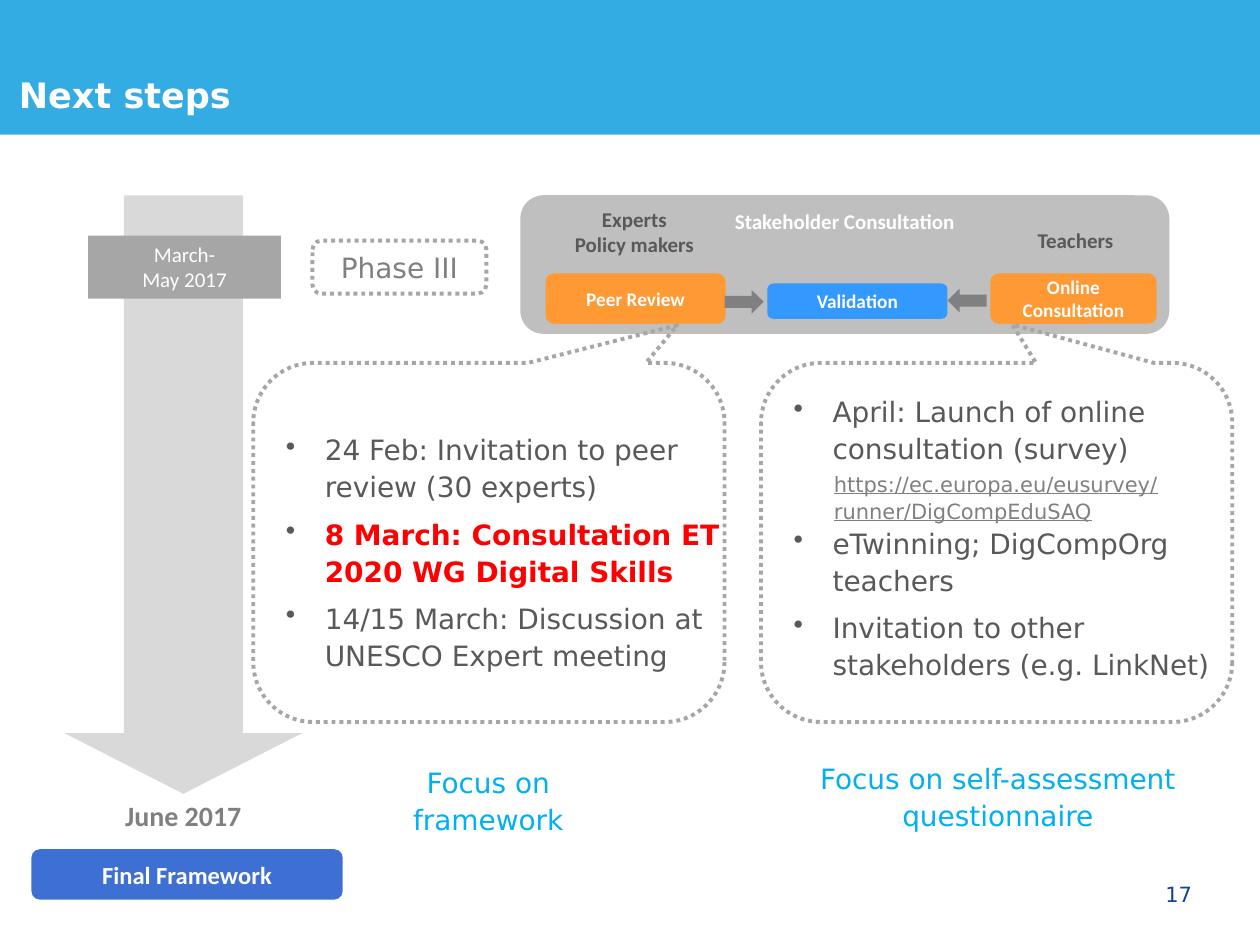
from dataclasses import dataclass

from lxml import etree
from pptx import Presentation
from pptx.dml.color import RGBColor
from pptx.enum.dml import MSO_LINE
from pptx.enum.shapes import MSO_SHAPE
from pptx.enum.text import MSO_ANCHOR, PP_ALIGN
from pptx.oxml.ns import qn
from pptx.util import Inches, Pt

LEFT, CENTER, RIGHT = PP_ALIGN.LEFT, PP_ALIGN.CENTER, PP_ALIGN.RIGHT
TOP, MIDDLE, BOTTOM = MSO_ANCHOR.TOP, MSO_ANCHOR.MIDDLE, MSO_ANCHOR.BOTTOM
RECT, ROUNDED = MSO_SHAPE.RECTANGLE, MSO_SHAPE.ROUNDED_RECTANGLE
DOWN_ARROW, RIGHT_ARROW = MSO_SHAPE.DOWN_ARROW, MSO_SHAPE.RIGHT_ARROW
CALLOUT = MSO_SHAPE.ROUNDED_RECTANGULAR_CALLOUT
DOTTED = MSO_LINE.ROUND_DOT


@dataclass(frozen=True)
class Theme:
    body: str = "DejaVu Sans"
    label: str = "Calibri"
    white: str = "FFFFFF"
    band: str = "33ACE3"
    arrow: str = "D9D9D9"
    panel: str = "BFBFBF"
    outline: str = "A6A6A6"
    muted: str = "808080"
    dark: str = "595959"
    orange: str = "FF9933"
    blue: str = "3399FF"
    result: str = "3E6FD2"
    focus: str = "00B0F0"
    alert: str = "FF0000"
    number: str = "164194"
    title_size: int = 20
    text_size: int = 16
    result_size: int = 14
    small_size: int = 12
    step_size: int = 11


THEME = Theme()
COLUMNS, ROWS = 100, 75
WIDTH, HEIGHT = Inches(10), Inches(7.5)

TITLE = "Next steps"
PAGE = "17"
PERIOD = ["March-", "May 2017"]
DEADLINE = "June 2017"
RESULT = "Final Framework"
PHASE = "Phase III"
PANEL_TITLE = "Stakeholder Consultation"
STEPS = [
    ("Peer Review", THEME.orange, (43.3, 21.7, 14.3, 4)),
    ("Validation", THEME.blue, (60.9, 22.5, 14.3, 2.8)),
    ("Online Consultation", THEME.orange, (78.6, 21.7, 13.2, 4)),
]
STEP_ARROWS = [((57.5, 23), 0), ((75.2, 22.9), 180)]
AUDIENCES = [
    (["Experts", "Policy makers"], (44.6, 15.9, 11.5, 5), 1),
    (["Teachers"], (81.3, 17.4, 8.1, 3.1), 1.1),
]
SURVEY_URL = "https://ec.europa.eu/eusurvey/runner/DigCompEduSAQ"
URL_GAP = 27
TRACKS = [
    {
        "column": 20.1,
        "pointer": (-0.4, 0.605),
        "list_row": 33.6,
        "list_rows": 20.5,
        "items": [
            "24 Feb: Invitation to peer review (30 experts)",
            ("8 March: Consultation ET 2020 WG Digital Skills",
             {"color": THEME.alert, "bold": True}),
            "14/15 March: Discussion at UNESCO Expert meeting",
        ],
        "focus": "Focus on framework",
        "focus_place": (30.3, 60, 16.9, 6.9),
    },
    {
        "column": 60.4,
        "pointer": (-0.033, 0.607),
        "list_row": 30.6,
        "list_rows": 24.3,
        "items": [
            "April: Launch of online consultation (survey)",
            ("eTwinning; DigCompOrg teachers", {"before": URL_GAP}),
            "Invitation to other stakeholders (e.g. LinkNet)",
        ],
        "focus": "Focus on self-assessment questionnaire",
        "focus_place": (62.6, 59.7, 33.2, 6.9),
    },
]


def place(column, row, columns, rows):
    return (round(WIDTH * column / COLUMNS), round(HEIGHT * row / ROWS),
            round(WIDTH * columns / COLUMNS), round(HEIGHT * rows / ROWS))


def add_bullet(paragraph, color):
    properties = paragraph._p.get_or_add_pPr()
    properties.set("marL", str(Inches(0.31)))
    properties.set("indent", str(-Inches(0.31)))
    bullet_color = etree.SubElement(properties, qn("a:buClr"))
    etree.SubElement(bullet_color, qn("a:srgbClr"), val=color)
    etree.SubElement(properties, qn("a:buChar"), char="•")


def write(holder, text, *, size=THEME.text_size, font=THEME.body, color=THEME.dark,
          bold=False, underline=False, align=LEFT, anchor=TOP, spacing=1,
          before=0, after=0, bullet=False, wrap=True, insets=(0.1, 0.05)):
    frame = holder.text_frame
    frame.word_wrap = wrap
    frame.vertical_anchor = anchor
    frame.margin_left = frame.margin_right = Inches(insets[0])
    frame.margin_top = frame.margin_bottom = Inches(insets[1])
    for index, entry in enumerate([text] if isinstance(text, str) else text):
        words, own = entry if isinstance(entry, tuple) else (entry, {})
        paragraph = frame.add_paragraph() if index else frame.paragraphs[0]
        if bullet:
            add_bullet(paragraph, color)
        paragraph.alignment = align
        paragraph.line_spacing = spacing
        paragraph.space_before = Pt(own.get("before", before))
        paragraph.space_after = Pt(after)
        run = paragraph.add_run()
        run.text = words
        run.font.name = font
        run.font.size = Pt(size)
        run.font.bold = own.get("bold", bold)
        run.font.underline = underline
        run.font.color.rgb = RGBColor.from_string(own.get("color", color))


def draw(slide, kind, area, fill=None, dotted=False, rotation=0, adjustments=()):
    figure = slide.shapes.add_shape(kind, *place(*area))
    figure.shadow.inherit = False
    figure.rotation = rotation
    for index, value in enumerate(adjustments):
        figure.adjustments[index] = value
    if fill:
        figure.fill.solid()
        figure.fill.fore_color.rgb = RGBColor.from_string(fill)
    else:
        figure.fill.background()
    if dotted:
        figure.line.color.rgb = RGBColor.from_string(THEME.outline)
        figure.line.width = Pt(2.25)
        figure.line.dash_style = DOTTED
    else:
        figure.line.fill.background()
    return figure


def note(slide, area, text, **style):
    write(slide.shapes.add_textbox(*place(*area)), text, **style)


def add_header(slide):
    band = draw(slide, RECT, (0, 0, COLUMNS, 10.7), THEME.band)
    heading = slide.shapes.title
    band._element.addnext(heading._element)
    heading.left, heading.top, heading.width, heading.height = place(1.5, 2.1, 42.2, 7.1)
    write(heading, TITLE, size=THEME.title_size, color=THEME.white, bold=True,
          anchor=BOTTOM, spacing=1.1, insets=(0, 0))
    note(slide, (72.3, 69, 23.3, 4), PAGE, size=THEME.small_size, color=THEME.number,
         align=RIGHT, anchor=MIDDLE, insets=(0.1, 0))


def add_timeline(slide):
    label = {"font": THEME.label, "align": CENTER}
    draw(slide, DOWN_ARROW, (5.1, 15.5, 18.9, 47.5), THEME.arrow, adjustments=(0.5, 0.255))
    write(draw(slide, RECT, (7, 18.7, 15.3, 5), THEME.outline), PERIOD,
          size=THEME.small_size, color=THEME.white, **label)
    note(slide, (6.2, 62.9, 16.7, 3.7), DEADLINE, color=THEME.muted, bold=True, **label)
    write(draw(slide, ROUNDED, (2.5, 67.4, 24.7, 4), THEME.result), RESULT,
          size=THEME.result_size, color=THEME.white, bold=True, anchor=MIDDLE, **label)
    write(draw(slide, ROUNDED, (24.8, 19.1, 13.8, 4.2), THEME.white, dotted=True), PHASE,
          color=THEME.muted, align=CENTER, anchor=MIDDLE)


def add_consultation(slide):
    label = {"font": THEME.label, "bold": True, "align": CENTER}
    write(draw(slide, ROUNDED, (41.3, 15.5, 51.5, 11), THEME.panel), PANEL_TITLE,
          size=THEME.small_size, color=THEME.white, **label)
    for step, fill, area in STEPS:
        write(draw(slide, ROUNDED, area, fill), step, size=THEME.step_size,
              color=THEME.white, anchor=MIDDLE, **label)
    for start, rotation in STEP_ARROWS:
        draw(slide, RIGHT_ARROW, (*start, 3.1, 1.9), THEME.muted, rotation=rotation)
    for audience, area, spacing in AUDIENCES:
        note(slide, area, audience, size=THEME.small_size, wrap=False,
             spacing=spacing, **label)


def add_tracks(slide):
    for track in TRACKS:
        column = track["column"]
        draw(slide, CALLOUT, (column, 28.8, 37.4, 28.5), dotted=True, rotation=180,
             adjustments=(*track["pointer"], 0.167))
        note(slide, (column + 1.6, track["list_row"], 37.7, track["list_rows"]),
             track["items"], bullet=True, spacing=1.1, after=6)
        note(slide, track["focus_place"], track["focus"], color=THEME.focus,
             align=CENTER, spacing=1.1)
    note(slide, (65.2, 36.7, 28.9, 5.5), SURVEY_URL, size=THEME.small_size,
         color=THEME.muted, underline=True, spacing=1.1)


def main():
    deck = Presentation()
    deck.slide_width, deck.slide_height = WIDTH, HEIGHT
    slide = deck.slides.add_slide(deck.slide_layouts[5])
    add_header(slide)
    add_timeline(slide)
    add_consultation(slide)
    add_tracks(slide)
    deck.save("out.pptx")


if __name__ == "__main__":
    main()
